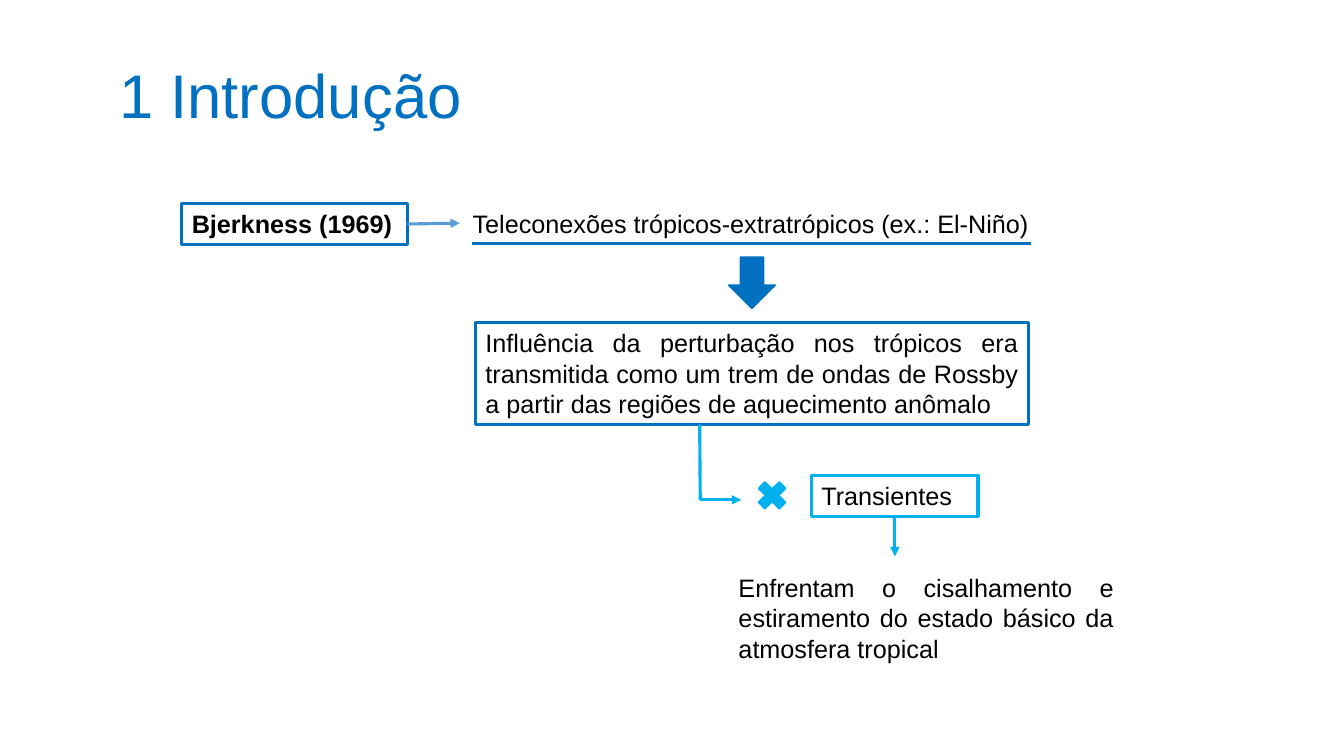
import pptx
import pptx.util
import pptx.dml.color
import pptx.enum.shapes
import pptx.enum.text
import pptx.oxml.ns
import lxml.etree

Pt = pptx.util.Pt
SHAPES = pptx.enum.shapes.MSO_SHAPE
ALIGN = pptx.enum.text.PP_ALIGN
ANCHOR = pptx.enum.text.MSO_ANCHOR
AUTO_SIZE = pptx.enum.text.MSO_AUTO_SIZE

COLORS = {"blue": "0070C0", "sky": "00B0F0", "steel": "5B9BD5", "text": "000000"}
LINE_WIDTH = 2.25


def color(name):
    return pptx.dml.color.RGBColor.from_string(COLORS[name])


def write(frame, text, size=18, ink="text", bold=False, align=ALIGN.LEFT,
          anchor=ANCHOR.TOP, spacing=1.0, fit=AUTO_SIZE.SHAPE_TO_FIT_TEXT):
    frame.word_wrap = True
    frame.auto_size = fit
    frame.vertical_anchor = anchor
    paragraph = frame.paragraphs[0]
    paragraph.alignment = align
    paragraph.line_spacing = spacing
    run = paragraph.add_run()
    run.text = text
    run.font.name = "Arial"
    run.font.size = Pt(size)
    run.font.bold = bold
    run.font.color.rgb = color(ink)


def add_title(slide, text):
    title = slide.shapes.title
    title.left, title.top, title.width, title.height = Pt(78), Pt(41), Pt(828), Pt(104.4)
    # A deep bottom inset lifts the heading above the middle of its area
    title.text_frame.margin_bottom = Pt(49.5)
    write(title.text_frame, text, size=44, ink="blue", anchor=ANCHOR.MIDDLE,
          spacing=0.9, fit=AUTO_SIZE.NONE)


def add_figure(slide, kind, left, top, width, height, outline, fill=None, weight=1):
    figure = slide.shapes.add_shape(kind, Pt(left), Pt(top), Pt(width), Pt(height))
    figure.shadow.inherit = False
    if fill:
        figure.fill.solid()
        figure.fill.fore_color.rgb = color(fill)
    else:
        figure.fill.background()
    figure.line.color.rgb = color(outline)
    figure.line.width = Pt(weight)
    return figure


def add_framed_text(slide, text, left, top, width, height, outline, **text_format):
    frame = add_figure(slide, SHAPES.RECTANGLE, left, top, width, height, outline,
                       weight=LINE_WIDTH)
    write(frame.text_frame, text, **text_format)


def add_plain_text(slide, text, left, top, width, height, **text_format):
    label = slide.shapes.add_textbox(Pt(left), Pt(top), Pt(width), Pt(height))
    write(label.text_frame, text, **text_format)


def add_link(slide, start, end, ink, arrow=True):
    link = slide.shapes.add_connector(
        pptx.enum.shapes.MSO_CONNECTOR.STRAIGHT, *(Pt(v) for v in start + end))
    link.line.color.rgb = color(ink)
    link.line.width = Pt(LINE_WIDTH)
    qn = pptx.oxml.ns.qn
    if arrow:
        outline = link.line._get_or_add_ln()
        lxml.etree.SubElement(outline, qn("a:tailEnd"), type="triangle")
    lxml.etree.SubElement(link._element.spPr, qn("a:effectLst"))


def main():
    deck = pptx.Presentation()
    deck.slide_width, deck.slide_height = Pt(960), Pt(540)
    slide = deck.slides.add_slide(deck.slide_layouts.get_by_name("Title Only"))
    add_title(slide, "1 Introdução")

    # Author and teleconnections
    add_framed_text(slide, "Bjerkness (1969)", 129.9, 145.5, 161.3, 29.1, "blue", bold=True)
    add_link(slide, (291, 160), (328.5, 159.4), "steel")
    add_plain_text(slide, "Teleconexões trópicos-extratrópicos (ex.: El-Niño)",
                   330.5, 145.5, 454.3, 29.1)
    add_link(slide, (337, 174.2), (736.8, 174.2), "blue", arrow=False)

    # Influence of the tropical perturbation
    add_figure(slide, SHAPES.DOWN_ARROW, 520.4, 183.6, 33.4, 36.7, "blue", fill="blue")
    add_framed_text(slide, "Influência da perturbação nos trópicos era transmitida como um "
                    "trem de ondas de Rossby a partir das regiões de aquecimento anômalo",
                    339.7, 230.5, 394.7, 72.7, "blue", align=ALIGN.JUSTIFY)

    # Transients opposing it
    add_figure(slide, SHAPES.MATH_MULTIPLY, 537.1, 339.8, 28.8, 28.1, "sky", fill="sky")
    add_framed_text(slide, "Transientes", 579.6, 339.8, 119, 29.1, "sky")
    add_link(slide, (499.8, 303.2), (500.2, 357), "sky", arrow=False)
    add_link(slide, (500.2, 357), (529.5, 357), "sky")

    # What the transients face
    add_plain_text(slide, "Enfrentam o cisalhamento e estiramento do estado básico da "
                   "atmosfera tropical", 520.4, 405.3, 282.2, 72.7, align=ALIGN.JUSTIFY)
    add_link(slide, (639.2, 368.8), (639.2, 397.4), "sky")

    deck.save("out.pptx")


if __name__ == "__main__":
    main()
